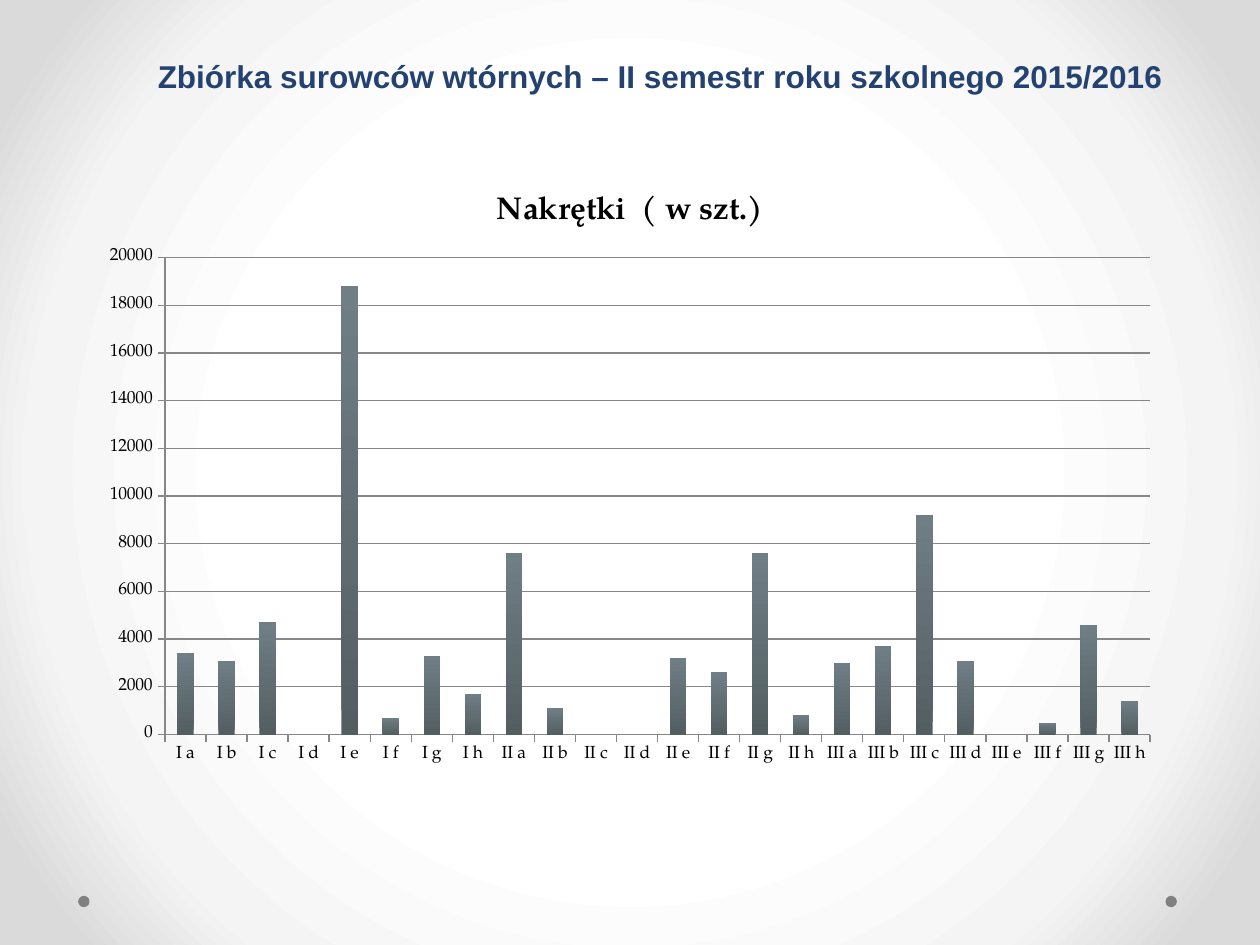
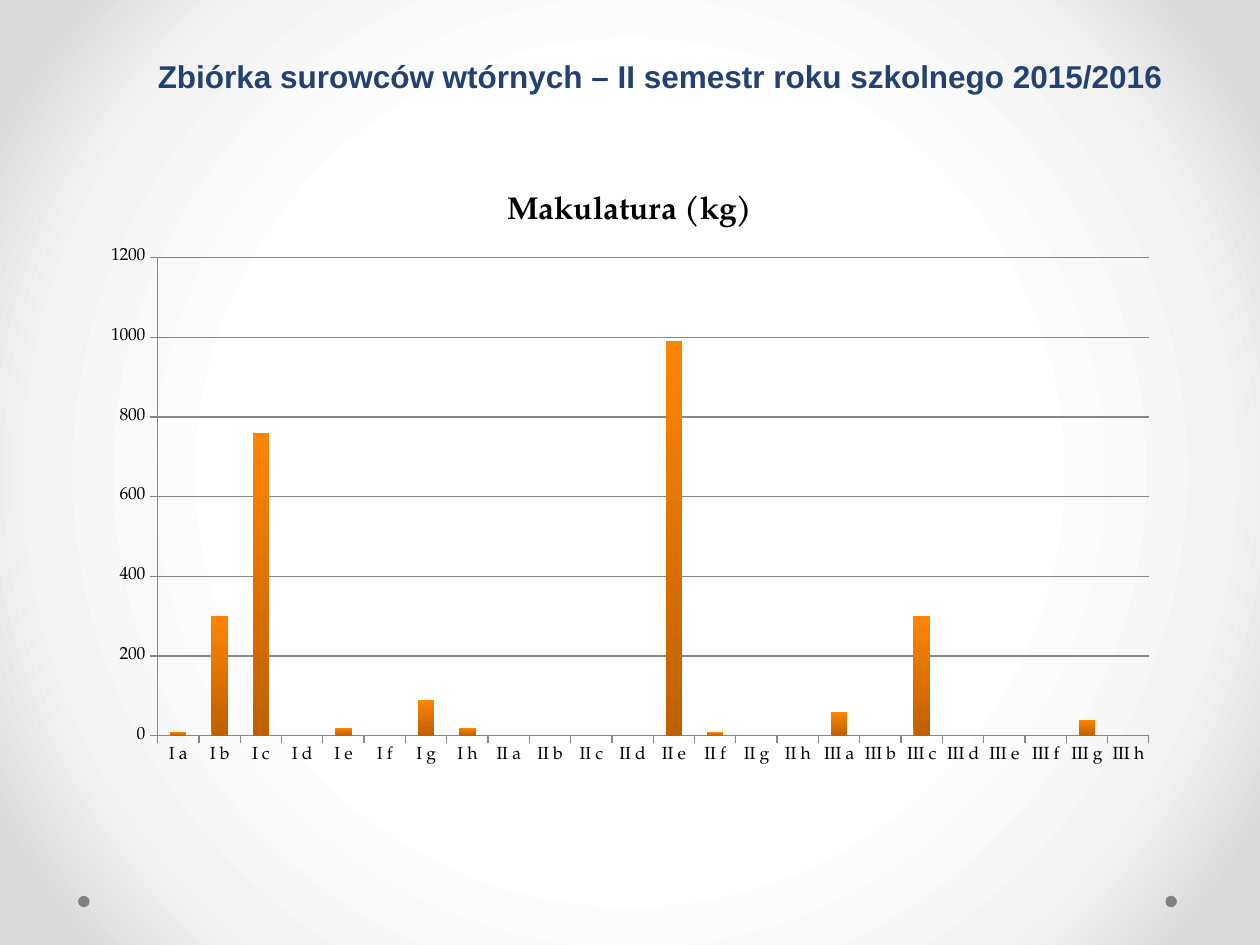
from lxml import etree
from pptx import Presentation
from pptx import util as u
from pptx.chart import data as chart_data
from pptx.dml.color import RGBColor
from pptx.enum import chart as charts, shapes, text
from pptx.oxml import parse_xml
from pptx.oxml.ns import nsdecls, qn

COLORS = {
    "title": "234271", "dot": "808080", "text": "000000", "grid": "878787",
    "slate_top": "6F7F85", "slate_bottom": "535E61",
    "orange_top": "FF8500", "orange_bottom": "BF6000",
}
BACKGROUND = [(50, "FFFFFF"), (76, "F4F4F4"), (92, "DADADA")]
TITLE = "Zbiórka surowców wtórnych – II semestr roku szkolnego 2015/2016"
CLASSES = [f"{year} {letter}" for year in ("I", "II", "III") for letter in "abcdefgh"]
CAPS = [3400, 3100, 4700, None, 18800, 700, 3300, 1700,
        7600, 1100, None, None, 3200, 2600, 7600, 800,
        3000, 3700, 9200, 3100, None, 500, 4600, 1400]
PAPER = [10, 300, 760, None, 20, None, 90, 20,
         None, 0, None, None, 990, 10, 0, None,
         60, None, 300, None, None, None, 40, None]


def rgb(name):
    return RGBColor.from_string(COLORS[name])


def inches(*lengths):
    return [u.Inches(length) for length in lengths]


class Report:
    def __init__(self):
        self.deck = Presentation()
        self.deck.slide_width, self.deck.slide_height = inches(10, 7.5)
        self.slide = None
        self.set_background()

    def set_background(self):
        """Give the master a circular gradient that darkens outwards."""
        master = self.deck.slide_master
        master.background.fill.gradient()
        gradient = master.element.find(".//" + qn("p:bgPr")).find(qn("a:gradFill"))
        for child in list(gradient):
            gradient.remove(child)
        stops = etree.SubElement(gradient, qn("a:gsLst"))
        for position, color in BACKGROUND:
            stop = etree.SubElement(stops, qn("a:gs"), pos=str(position * 1000))
            etree.SubElement(stop, qn("a:srgbClr"), val=color)
        gradient.append(parse_xml(
            f'<a:path {nsdecls("a")} path="circle">'
            '<a:fillToRect l="50000" t="50000" r="50000" b="50000"/></a:path>'))

    def new_slide(self):
        self.slide = self.deck.slides.add_slide(self.deck.slide_layouts[6])
        for left in (9.25, 0.62):
            self.dot(left, 7.11)
        self.title(TITLE)

    def dot(self, left, top):
        dot = self.slide.shapes.add_shape(
            shapes.MSO_SHAPE.OVAL, *inches(left, top, 0.09, 0.09))
        dot.shadow.inherit = False
        dot.fill.solid()
        dot.fill.fore_color.rgb = rgb("dot")
        dot.line.fill.background()

    def title(self, words):
        box = self.slide.shapes.add_textbox(*inches(0.83, 0.36, 8.82, 0.89))
        box.text_frame.word_wrap = True
        para = box.text_frame.paragraphs[0]
        para.text = words
        para.alignment = text.PP_ALIGN.CENTER
        para.line_spacing = 1.15
        para.space_after = u.Pt(10)
        self.style_font(para.font, "Arial", 18, "title", True)

    def style_font(self, font, name, size, color, bold=False):
        font.name, font.size, font.bold = name, u.Pt(size), bold
        font.color.rgb = rgb(color)

    def column_chart(self, heading, series_name, values, hue, place):
        data = chart_data.CategoryChartData()
        data.categories = CLASSES
        data.add_series(series_name, values)
        chart = self.slide.shapes.add_chart(
            charts.XL_CHART_TYPE.COLUMN_CLUSTERED, *inches(*place), data).chart
        self.style_font(chart.font, "TeX Gyre Pagella", 10, "text")
        chart.has_legend = False
        chart.has_title = True
        para = chart.chart_title.text_frame.paragraphs[0]
        para.text = heading
        self.style_font(para.font, "TeX Gyre Pagella", 18, "text", True)

        for axis in (chart.category_axis, chart.value_axis):
            axis.major_tick_mark = charts.XL_TICK_MARK.OUTSIDE
            axis.minor_tick_mark = charts.XL_TICK_MARK.NONE
            self.style_line(axis.format.line)
        self.style_line(chart.value_axis.major_gridlines.format.line)

        plot = chart.plots[0]
        plot.gap_width = 150
        plot.vary_by_categories = False
        fill = plot.series[0].format.fill
        fill.gradient()
        fill.gradient_angle = 90
        for stop, end in zip(fill.gradient_stops, ("bottom", "top")):
            stop.color.rgb = rgb(f"{hue}_{end}")

    def style_line(self, line):
        line.color.rgb = rgb("grid")
        line.width = u.Pt(0.75)


def main():
    report = Report()
    report.new_slide()
    report.column_chart("Nakrętki  ( w szt.)", "Series 1", CAPS, "slate",
                        (0.7, 1.34, 8.6, 4.82))
    report.new_slide()
    report.column_chart("Makulatura (kg)", "Makulatura (kg)", PAPER, "orange",
                        (0.71, 1.34, 8.58, 4.83))
    report.deck.save("out.pptx")


if __name__ == "__main__":
    main()
